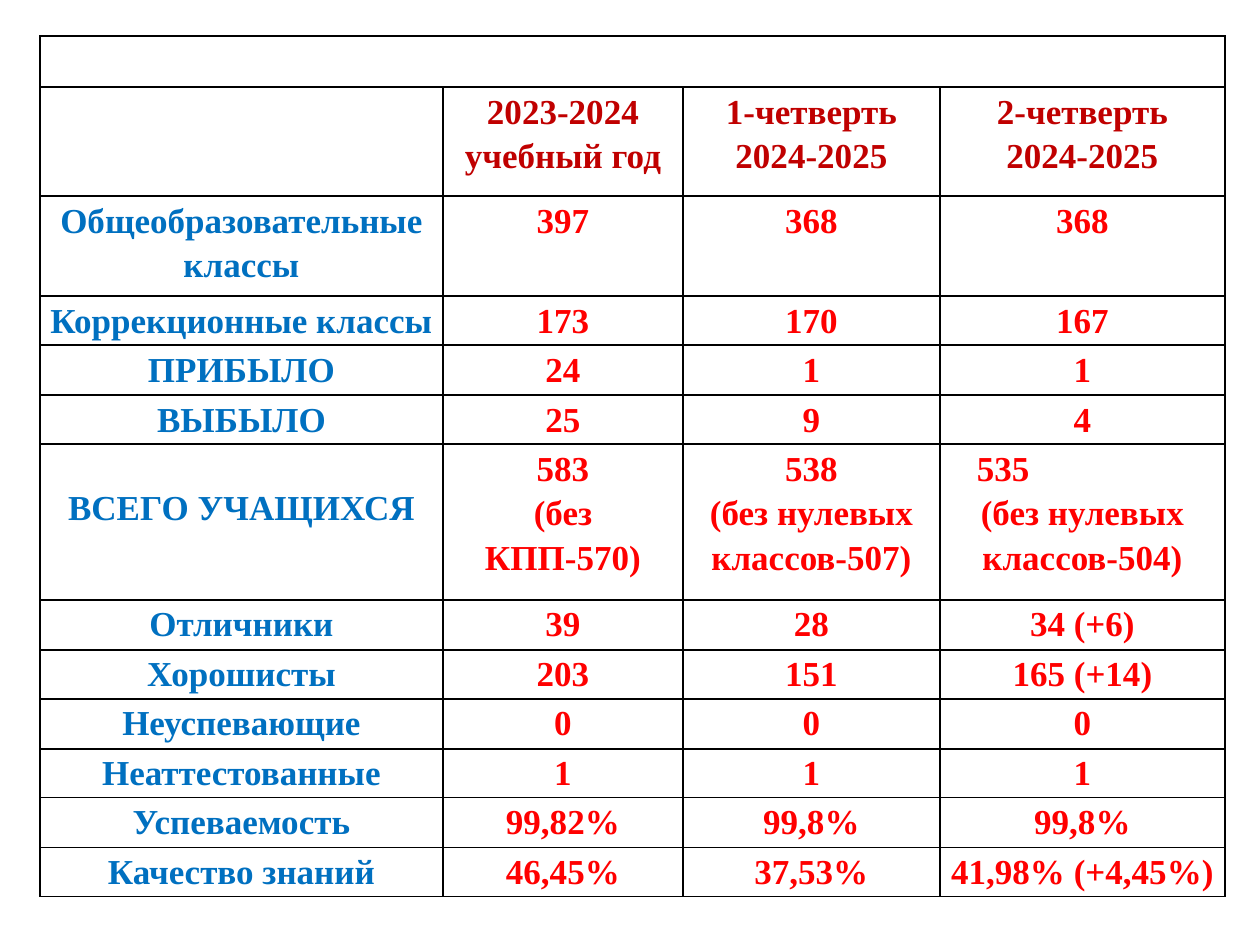
from dataclasses import dataclass

from lxml import etree
from pptx import Presentation
from pptx.dml.color import RGBColor
from pptx.enum.text import PP_ALIGN
from pptx.oxml.ns import qn
from pptx.table import Table, _Cell
from pptx.util import Emu, Pt

CENTER, LEFT = PP_ALIGN.CENTER, PP_ALIGN.LEFT
BLANK = 6


@dataclass(frozen=True)
class Theme:
    head: str = "C00000"
    label: str = "0070C0"
    value: str = "FF0000"
    line: str = "000000"
    font: str = "Times New Roman"
    size: int = 20
    space: float = 1.15
    border: int = 1


@dataclass(frozen=True)
class Row:
    label: str
    values: tuple[str, str, str]
    height: int = 50


THEME = Theme()
X, Y = 40, 36
WIDTHS = (403, 240, 257, 285)
TITLE_HEIGHT = 49
TOTAL = "ВСЕГО УЧАЩИХСЯ"
ROWS = (
    Row("", ("2023-2024 учебный год", "1-четверть 2024-2025",
             "2-четверть\n2024-2025"), 109),
    Row("Общеобразовательные классы", ("397", "368", "368"), 100),
    Row("Коррекционные классы", ("173", "170", "167"), 49),
    Row("ПРИБЫЛО", ("24", "1", "1")),
    Row("ВЫБЫЛО", ("25", "9", "4"), 49),
    Row(TOTAL, ("583\n(без КПП-570)", "538\n(без нулевых классов-507)",
                "535\n(без нулевых классов-504)"), 156),
    Row("Отличники", ("39", "28", "34 (+6)")),
    Row("Хорошисты", ("203", "151", "165 (+14)"), 49),
    Row("Неуспевающие", ("0", "0", "0")),
    Row("Неаттестованные", ("1", "1", "1"), 49),
    Row("Успеваемость", ("99,82%", "99,8%", "99,8%")),
    Row("Качество знаний", ("46,45%", "37,53%", "41,98% (+4,45%)"), 49),
)


def px(n: int) -> Emu:
    return Emu(round(n * 914400 / 126))


def frame(cell: _Cell) -> None:
    """Clear the fill and draw all four borders."""
    cell.fill.background()
    props = cell._tc.get_or_add_tcPr()
    for i, side in enumerate(("lnL", "lnR", "lnT", "lnB")):
        line = etree.Element(qn(f"a:{side}"), w=str(Pt(THEME.border)))
        fill = etree.SubElement(line, qn("a:solidFill"))
        etree.SubElement(fill, qn("a:srgbClr"), val=THEME.line)
        props.insert(i, line)


def write(cell: _Cell, text: str, color: str) -> None:
    margins = {"margin_left": 9, "margin_right": 9,
               "margin_top": 0, "margin_bottom": 0}
    for name, size in margins.items():
        setattr(cell, name, px(size))
    cell.text = text
    style = {"name": THEME.font, "size": Pt(THEME.size), "bold": True}
    for para in cell.text_frame.paragraphs:
        para.alignment, para.line_spacing = CENTER, THEME.space
        for name, value in style.items():
            setattr(para.font, name, value)
        para.font.color.rgb = RGBColor.from_string(color)
        for run in para.runs:
            for name, value in style.items():
                setattr(run.font, name, value)
            run.font.color.rgb = RGBColor.from_string(color)


def fill_row(table: Table, index: int, row: Row) -> None:
    table.rows[index].height = px(row.height)
    color = THEME.value if row.label else THEME.head
    if row.label:
        write(table.cell(index, 0), row.label, THEME.label)
    for col, text in enumerate(row.values, 1):
        write(table.cell(index, col), text, color)
    if row.label == TOTAL:
        table.cell(index, 0).margin_top = px(39)
        first = table.cell(index, 3).text_frame.paragraphs[0]
        first.alignment = LEFT
        first._p.get_or_add_pPr().set("marL", str(px(28)))


def main() -> None:
    deck = Presentation()
    deck.slide_width, deck.slide_height = px(1260), px(945)
    slide = deck.slides.add_slide(deck.slide_layouts[BLANK])
    height = TITLE_HEIGHT + sum(row.height for row in ROWS)
    table = slide.shapes.add_table(
        len(ROWS) + 1, len(WIDTHS), px(X), px(Y), px(sum(WIDTHS)), px(height)
    ).table
    table.first_row = table.horz_banding = False
    for col, width in zip(table.columns, WIDTHS):
        col.width = px(width)
    table.rows[0].height = px(TITLE_HEIGHT)
    for index, row in enumerate(ROWS, 1):
        fill_row(table, index, row)
    for cell in table.iter_cells():
        frame(cell)
    table.cell(0, 0).merge(table.cell(0, len(WIDTHS) - 1))
    deck.save("out.pptx")


if __name__ == "__main__":
    main()
